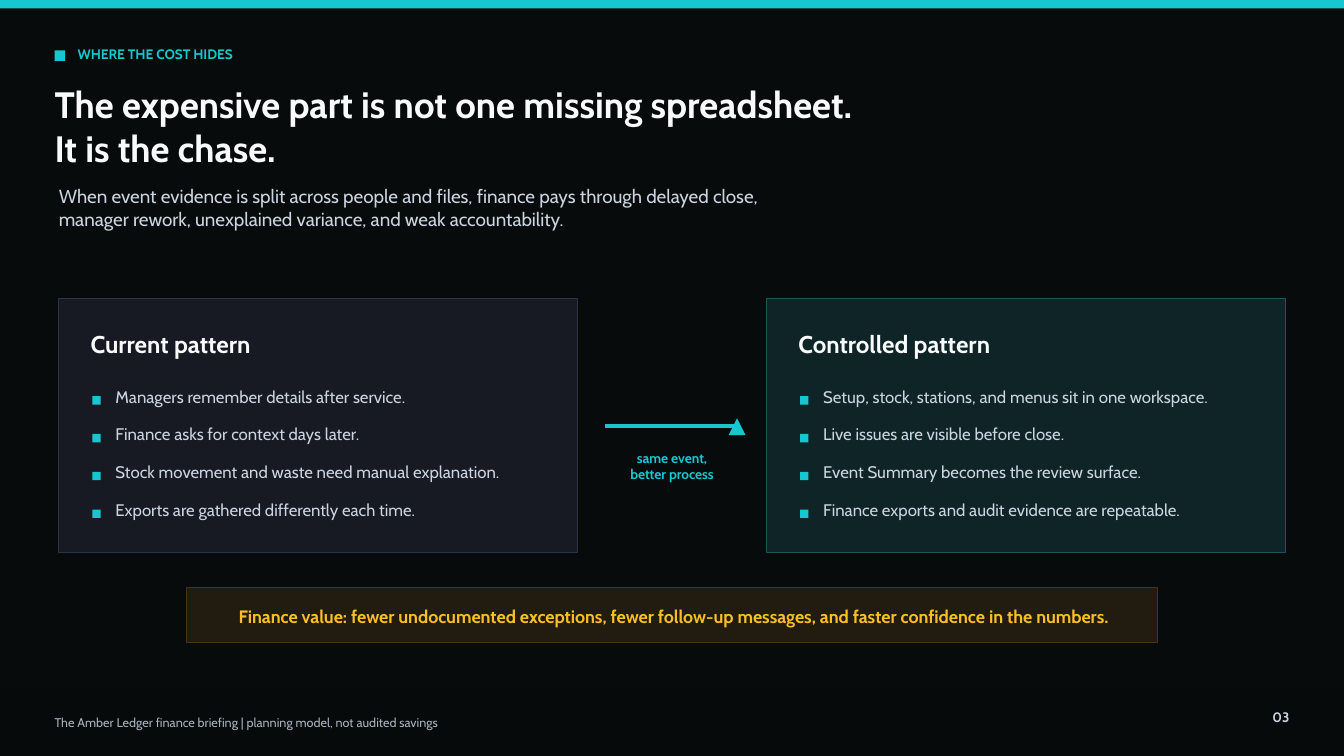
from dataclasses import dataclass

from pptx import Presentation
from pptx.dml.color import RGBColor
from pptx.enum.shapes import MSO_CONNECTOR as CONN, MSO_SHAPE as SHAPE
from pptx.enum.text import PP_ALIGN as ALIGN
from pptx.oxml.ns import qn
from pptx.util import Pt
from lxml.etree import SubElement


@dataclass(frozen=True)
class Theme:
    font: str = "Cabin"
    # Colours
    back: str = "080B0B"
    footer: str = "070A0A"
    accent: str = "17C7CF"
    bright: str = "F8FAFC"
    body: str = "CBD5E1"
    muted: str = "A7B2BF"
    current: tuple = ("171923", "2B3442")
    controlled: tuple = ("0E2427", "1E555B")
    value: tuple = ("211B10", "4B3415")
    gold: str = "FBBF24"
    # Type sizes
    title: float = 26.25
    heading: float = 17.25
    lead: float = 13.5
    callout: float = 12.75
    item: float = 12
    label: float = 9.75
    note: float = 9


T = Theme()
W, H = 960, 540
MARGIN = 39


def add_box(slide, x, y, w, h, fill, line=None, kind=SHAPE.RECTANGLE):
    sp = slide.shapes.add_shape(kind, Pt(x), Pt(y), Pt(w), Pt(h))
    sp.shadow.inherit = False
    sp.fill.solid()
    sp.fill.fore_color.rgb = RGBColor.from_string(fill)
    if line:
        sp.line.color.rgb = RGBColor.from_string(line)
        sp.line.width = Pt(0.75)
    else:
        sp.line.fill.background()
    return sp


def add_text(slide, x, y, w, h, lines, size, color, bold=False, align=ALIGN.LEFT):
    tf = slide.shapes.add_textbox(Pt(x), Pt(y), Pt(w), Pt(h)).text_frame
    tf.word_wrap = True
    tf.margin_left = tf.margin_top = tf.margin_right = tf.margin_bottom = 0
    for i, line in enumerate(lines):
        p = tf.add_paragraph() if i else tf.paragraphs[0]
        p.alignment = align
        r = p.add_run()
        r.text = line
        r.font.name = T.font
        r.font.size = Pt(size)
        r.font.bold = bold
        r.font.color.rgb = RGBColor.from_string(color)


def add_frame(slide, number):
    """Background, top bar and footer."""
    add_box(slide, 0, 0, W, H, T.back)
    add_box(slide, 0, 0, W, 6, T.accent)
    add_box(slide, 0, 492, W, 48, T.footer)
    add_text(slide, MARGIN, 510.5, 555, 14,
             ["The Amber Ledger finance briefing | planning model, not audited savings"],
             T.note, T.muted)
    add_text(slide, 883.5, 506, 37.5, 16.5, [number], T.label, T.body, True, ALIGN.RIGHT)


def add_header(slide, x, y, kicker, title, lead):
    """Kicker with its square, title and lead sentence."""
    add_box(slide, x, y + 3, 7.5, 7.5, T.accent)
    add_text(slide, x + 16.5, y, 390, 15, [kicker], T.label, T.accent, True)
    add_text(slide, x, y + 25.5, 585, 72, [title], T.title, T.bright, True)
    add_text(slide, x + 3, y + 99, 540, 43, [lead], T.lead, T.body)


def add_card(slide, x, y, w, h, colors, heading, items):
    """Panel with a heading and evenly spaced items."""
    add_box(slide, x, y, w, h, *colors)
    add_text(slide, x + 22.75, y + 22.5, 225, 21, [heading], T.heading, T.bright, True)
    for i, item in enumerate(items):
        top = y + 63 + i * 27
        add_box(slide, x + 24, top + 7, 6, 6, T.accent)
        add_text(slide, x + 40.5, top, 291, 24, [item], T.item, T.body)


def add_arrow(slide, x, y, w, lines):
    """Shaft, triangle marker and caption; y is the height of the shaft."""
    shaft = slide.shapes.add_connector(CONN.STRAIGHT, Pt(x), Pt(y), Pt(x + w - 5), Pt(y))
    shaft.line.color.rgb = RGBColor.from_string(T.accent)
    shaft.line.width = Pt(2.25)
    SubElement(shaft._element.spPr, qn("a:effectLst"))
    add_box(slide, x + w - 12, y - 5.5, 12, 12, T.accent, kind=SHAPE.ISOSCELES_TRIANGLE)
    add_text(slide, x + 10.5, y + 17, 75, 40, lines, T.label, T.accent, True, ALIGN.CENTER)


def add_callout(slide, x, y, w, h, text):
    """Framed value statement."""
    add_box(slide, x, y, w, h, *T.value)
    add_text(slide, x + 19.5, y + 12.75, w - 37.5, 18, [text],
             T.callout, T.gold, True, ALIGN.CENTER)


def build_slide(prs):
    slide = prs.slides.add_slide(prs.slide_layouts[6])
    add_frame(slide, "03")
    add_header(
        slide, MARGIN, 33, "WHERE THE COST HIDES",
        "The expensive part is not one missing spreadsheet. It is the chase.",
        "When event evidence is split across people and files, finance pays through "
        "delayed close, manager rework, unexplained variance, and weak accountability.")

    # Two mirrored cards with the arrow between them
    card_x, card_y, card_w, card_h = 42, 213, 370.5, 181.5
    add_card(slide, card_x, card_y, card_w, card_h, T.current, "Current pattern", [
        "Managers remember details after service.",
        "Finance asks for context days later.",
        "Stock movement and waste need manual explanation.",
        "Exports are gathered differently each time."])
    add_arrow(slide, 432, 304.25, 100.5, ["same event,", "better process"])
    add_card(slide, W - card_x - card_w, card_y, card_w, card_h, T.controlled,
             "Controlled pattern", [
                 "Setup, stock, stations, and menus sit in one workspace.",
                 "Live issues are visible before close.",
                 "Event Summary becomes the review surface.",
                 "Finance exports and audit evidence are repeatable."])

    add_callout(slide, 133, 419.75, W - 2 * 133, 39,
                "Finance value: fewer undocumented exceptions, fewer follow-up messages, "
                "and faster confidence in the numbers.")


def main():
    prs = Presentation()
    prs.slide_width, prs.slide_height = Pt(W), Pt(H)
    build_slide(prs)
    prs.save("out.pptx")


if __name__ == "__main__":
    main()
